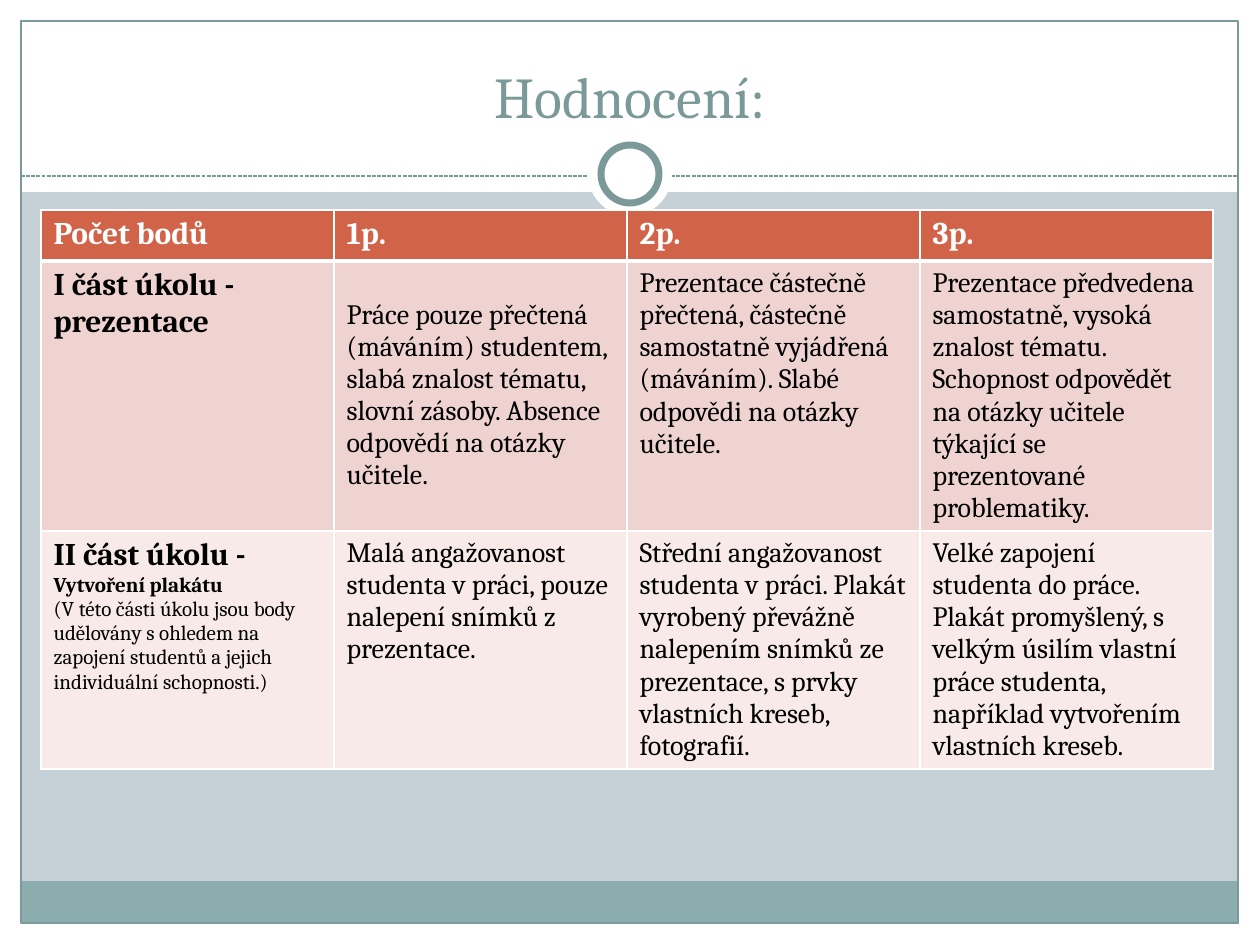
from typing import NamedTuple

from lxml.etree import SubElement
from pptx import Presentation
from pptx.dml.color import RGBColor
from pptx.enum.dml import MSO_LINE
from pptx.enum.shapes import MSO_CONNECTOR, MSO_SHAPE
from pptx.enum.text import MSO_ANCHOR, PP_ALIGN
from pptx.oxml.ns import qn
from pptx.util import Emu, Pt

FONT = "Cambria"
HEX = {
    "back": "C5D1D7", "white": "FFFFFF", "black": "000000",
    "teal": "7C999A", "foot": "8CADAE",
    "head": "D16349", "rose": "EED3D0", "pale": "F7EAE9",
}


class Part(NamedTuple):
    kind: MSO_SHAPE
    box: tuple[int, int, int, int]
    fill: str = ""
    line: str = ""
    width: float = 0.75


class Run(NamedTuple):
    text: str
    size: int = 16
    bold: bool = False


class Row(NamedTuple):
    high: int
    fill: str
    ink: str
    cells: list[list[Run]]  # one run per paragraph


def px(n: int) -> Emu:
    return Emu(round(n * 914400 / 126))


def rgb(name: str) -> RGBColor:
    return RGBColor.from_string(HEX[name])


def add_part(slide, part: Part) -> None:
    shape = slide.shapes.add_shape(part.kind, *map(px, part.box))
    shape.shadow.inherit = False
    if part.fill:
        shape.fill.solid()
        shape.fill.fore_color.rgb = rgb(part.fill)
    else:
        shape.fill.background()
    if part.line:
        shape.line.color.rgb = rgb(part.line)
        shape.line.width = Pt(part.width)
    else:
        shape.line.fill.background()


def add_rule(slide, left: int, right: int, y: int) -> None:
    rule = slide.shapes.add_connector(
        MSO_CONNECTOR.STRAIGHT, px(left), px(y), px(right), px(y))
    rule.line.color.rgb = rgb("teal")
    rule.line.width = Pt(0.75)
    rule.line.dash_style = MSO_LINE.SQUARE_DOT
    SubElement(rule._element.spPr, qn("a:effectLst"))


def add_run(para, run: Run, ink: str) -> None:
    item = para.add_run()
    item.text = run.text
    font = item.font
    font.name, font.size, font.bold = FONT, Pt(run.size), run.bold
    font.color.rgb = rgb(ink)


def add_edges(cell, top: int, base: int) -> None:
    props = cell._tc.get_or_add_tcPr()
    for tag, width in (("lnL", 1), ("lnR", 1), ("lnT", top), ("lnB", base)):
        edge = SubElement(props, qn(f"a:{tag}"), w=str(Pt(width)))
        fill = SubElement(edge, qn("a:solidFill"))
        SubElement(fill, qn("a:srgbClr"), val=HEX["white"])


def fill_cell(cell, row: Row, runs: list[Run]) -> None:
    cell.fill.solid()
    cell.fill.fore_color.rgb = rgb(row.fill)
    frame = cell.text_frame
    for i, run in enumerate(runs):
        para = frame.add_paragraph() if i else frame.paragraphs[0]
        add_run(para, run, row.ink)


def add_grid(slide, left: int, top: int, wide: int, rows: list[Row]):
    count = len(rows[0].cells)
    high = sum(row.high for row in rows)
    grid = slide.shapes.add_table(
        len(rows), count, px(left), px(top), px(wide * count), px(high)).table
    for col in grid.columns:
        col.width = px(wide)
    for r, row in enumerate(rows):
        grid.rows[r].height = px(row.high)
        for c, runs in enumerate(row.cells):
            cell = grid.cell(r, c)
            add_edges(cell, 3 if r == 1 else 1, 3 if r == 0 else 1)
            fill_cell(cell, row, runs)
    return grid


RECT, OVAL = MSO_SHAPE.RECTANGLE, MSO_SHAPE.OVAL
BANDS = [
    Part(RECT, (0, 924, 1260, 21), "white"),
    Part(RECT, (0, 0, 1260, 192), "white"),
    Part(RECT, (0, 0, 21, 945), "white"),
    Part(RECT, (1239, 0, 21, 945), "white"),
    Part(RECT, (21, 881, 1217, 43), "foot"),
    Part(RECT, (21, 21, 1217, 902), line="teal"),
]
RINGS = [
    Part(OVAL, (588, 132, 84, 84), "white"),
    Part(OVAL, (601, 145, 58, 58), "white", "teal", 4),
]
ROWS = [
    Row(51, "head", "white", [
        [Run(text, 18, True)] for text in ("Počet bodů", "1p.", "2p.", "3p.")]),
    Row(270, "rose", "black", [
        [Run("I část úkolu -", 18, True), Run("prezentace", 18, True)],
        [Run("Práce pouze přečtená (máváním) studentem, slabá znalost tématu, "
             "slovní zásoby. Absence odpovědí na otázky učitele.")],
        [Run("Prezentace částečně přečtená, částečně samostatně vyjádřená "
             "(máváním). Slabé odpovědi na otázky učitele.")],
        [Run("Prezentace předvedena samostatně, vysoká znalost tématu. "
             "Schopnost odpovědět na otázky učitele týkající se prezentované "
             "problematiky.")],
    ]),
    Row(238, "pale", "black", [
        [Run("II část úkolu -", 18, True), Run("Vytvoření plakátu", 12, True),
         Run("(V této části úkolu jsou body udělovány s ohledem na zapojení "
             "studentů a jejich individuální schopnosti.)", 12)],
        [Run("Malá angažovanost studenta v práci, pouze nalepení snímků "
             "z prezentace.")],
        [Run("Střední angažovanost studenta v práci. Plakát vyrobený převážně "
             "nalepením snímků ze prezentace, s prvky vlastních kreseb, "
             "fotografií.")],
        [Run("Velké zapojení studenta do práce. Plakát promyšlený, s velkým "
             "úsilím vlastní práce studenta, například vytvořením vlastních "
             "kreseb.")],
    ]),
]


def main() -> None:
    deck = Presentation()
    deck.slide_width, deck.slide_height = px(1260), px(945)
    slide = deck.slides.add_slide(deck.slide_layouts[5])
    slide.background.fill.solid()
    slide.background.fill.fore_color.rgb = rgb("back")

    # Frame, dashed rule and ring
    for part in BANDS:
        add_part(slide, part)
    add_rule(slide, 21, 1239, 176)
    for part in RINGS:
        add_part(slide, part)

    # Title, raised above the white band
    title = slide.shapes.title
    title.left, title.top, title.width, title.height = map(
        px, (42, 32, 1176, 104))
    title.text_frame.vertical_anchor = MSO_ANCHOR.BOTTOM
    para = title.text_frame.paragraphs[0]
    para.alignment = PP_ALIGN.CENTER
    add_run(para, Run("Hodnocení:", 33), "teal")
    slide.shapes._spTree.append(title._element)

    # Scoring table; one cell starts a line lower
    grid = add_grid(slide, 41, 210, 293, ROWS)
    grid.cell(1, 1).margin_top = px(38)

    deck.save("out.pptx")


if __name__ == "__main__":
    main()
